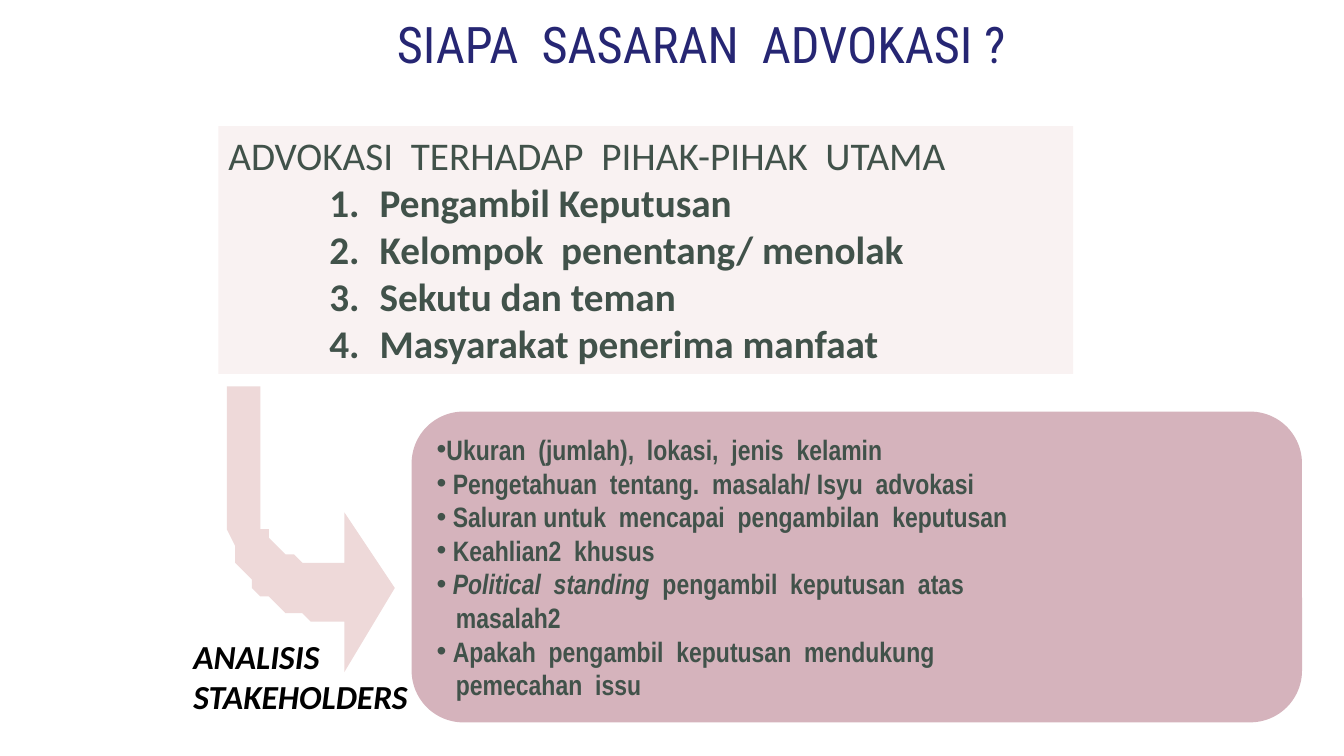
from lxml import etree
from pptx import Presentation
from pptx import util as u
from pptx.dml.color import RGBColor
from pptx.enum import shapes, text
from pptx.oxml.ns import qn

COLS, ROWS = 160, 90
COLORS = {"title": "262673", "body": "41524A", "label": "000000",
          "parties": "F9F2F2", "arrow": "EED9D9", "panel": "D5B3BC"}


def bezier(start, ctrl1, ctrl2, end, steps=16):
    """Points along a cubic curve, without its start."""
    points = []
    for i in range(1, steps + 1):
        t = i / steps
        weights = ((1 - t) ** 3, 3 * t * (1 - t) ** 2, 3 * t * t * (1 - t), t ** 3)
        corners = tuple(zip(start, ctrl1, ctrl2, end))
        points.append(tuple(sum(w * c for w, c in zip(weights, axis)) for axis in corners))
    return points


class Deck:
    def __init__(self):
        self.prs = Presentation()
        self.prs.slide_width, self.prs.slide_height = u.Emu(12192000), u.Inches(7.5)
        self.cell = self.prs.slide_height // ROWS
        self.slide = self.prs.slides.add_slide(self.prs.slide_layouts[1])

    def box(self, *grid):
        return [u.Emu(round(n * self.cell)) for n in grid]

    def paint(self, shape, color):
        shape.fill.solid()
        shape.fill.fore_color.rgb = RGBColor.from_string(COLORS[color])
        shape.line.fill.background()

    def style(self, paragraph, font, size, color, bold=False, italic=False,
              align=text.PP_ALIGN.LEFT):
        paragraph.alignment = align
        paragraph.space_before = paragraph.space_after = u.Pt(0)
        for run in paragraph.runs:
            run.font.name, run.font.size = font, u.Pt(size)
            run.font.bold, run.font.italic = bold, italic
            run.font.color.rgb = RGBColor.from_string(COLORS[color])

    def bullet(self, paragraph, margin, hang, tag="a:buNone", **attributes):
        props = paragraph._p.get_or_add_pPr()
        props.set("marL", str(u.Inches(margin)))
        props.set("indent", str(-u.Inches(hang)))
        if tag == "a:buChar":
            etree.SubElement(props, qn("a:buFont")).set("typeface", "Arial")
        etree.SubElement(props, qn(tag), attributes)

    def placeholder(self, index, grid, lines):
        holder = self.slide.placeholders[index]
        holder.left, holder.top, holder.width, holder.height = self.box(*grid)
        frame = holder.text_frame
        frame.text = "\n".join(lines)
        frame.word_wrap, frame.auto_size = True, text.MSO_AUTO_SIZE.NONE
        frame.vertical_anchor = text.MSO_ANCHOR.TOP
        return holder

    def textbox(self, grid, lines):
        frame = self.slide.shapes.add_textbox(*self.box(*grid)).text_frame
        frame.text = "\n".join(lines)
        frame.word_wrap = False
        return frame

    def panel(self, grid, color):
        shape = self.slide.shapes.add_shape(
            shapes.MSO_SHAPE.ROUNDED_RECTANGLE, *self.box(*grid))
        shape.shadow.inherit = False
        self.paint(shape, color)
        shape.text_frame.word_wrap = True
        shape.text_frame.vertical_anchor = text.MSO_ANCHOR.MIDDLE
        return shape.text_frame

    def outline(self, points, color):
        builder = self.slide.shapes.build_freeform(*points[0], scale=self.cell)
        builder.add_line_segments(points[1:], close=True)
        shape = builder.convert_to_shape()
        shape.shadow.inherit = False
        self.paint(shape, color)


def main():
    deck = Deck()

    # Title
    title = deck.placeholder(0, (29, 1, 109, 6), ["SIAPA  SASARAN  ADVOKASI ?"])
    deck.style(title.text_frame.paragraphs[0], "Roboto Condensed", 36, "title",
               align=text.PP_ALIGN.CENTER)

    # Main parties: heading and numbered list
    parties = deck.placeholder(1, (26, 15, 101.75, 29.5), [
        "ADVOKASI  TERHADAP  PIHAK-PIHAK  UTAMA",
        "Pengambil Keputusan",
        "Kelompok  penentang/ menolak",
        "Sekutu dan teman",
        "Masyarakat penerima manfaat"])
    deck.paint(parties, "parties")
    heading, *numbered = parties.text_frame.paragraphs
    deck.style(heading, "Calibri", 28, "body")
    deck.bullet(heading, 0.5, 0.5)
    for party in numbered:
        party.level = 2
        deck.style(party, "Calibri", 28, "body", bold=True)
        deck.bullet(party, 1.5, 0.5, "a:buAutoNum", type="arabicPeriod")

    # Bent arrow from the parties to the analysis
    outer = bezier((38.5, 73.7), (32.2, 73.7), (27, 67.9), (27, 60.8))
    inner = bezier((31, 60.8), (31, 64.3), (34.3, 67.2), (38.5, 67.2))
    deck.outline([(47, 70.4), (40.8, 80), (40.8, 73.7), (38.5, 73.7), *outer,
                  (27, 46), (31, 46), (31, 60.8), *inner,
                  (40.8, 67.2), (40.8, 60.8)], "arrow")

    # Arrow label
    label = deck.textbox((21.84, 75.1, 28.2, 10.9), ["ANALISIS", "STAKEHOLDERS"])
    for line in label.paragraphs:
        deck.style(line, "Calibri", 24, "label", bold=True, italic=True)

    # Stakeholder analysis: text, whether bulleted, indent in inches
    aspects = [
        ("Ukuran  (jumlah),  lokasi,  jenis  kelamin", True, 0.09),
        ("Pengetahuan  tentang.  masalah/ Isyu  advokasi", True, 0.16),
        ("Saluran untuk  mencapai  pengambilan  keputusan", True, 0.16),
        ("Keahlian2  khusus", True, 0.16),
        ("Political  standing  ", True, 0.16),
        ("masalah2", False, 0.19),
        ("Apakah  pengambil  keputusan  mendukung", True, 0.16),
        ("pemecahan  issu", False, 0.19)]
    analysis = deck.panel((49, 49, 106, 37), "panel")
    analysis.text = "\n".join(wording for wording, *_ in aspects)
    standing = analysis.paragraphs[4]
    standing.add_run().text = "pengambil  keputusan  atas"
    for aspect, (_, bulleted, indent) in zip(analysis.paragraphs, aspects):
        deck.style(aspect, "Arial Narrow", 20, "body", bold=True)
        if bulleted:
            deck.bullet(aspect, indent, indent, "a:buChar", char="•")
        else:
            deck.bullet(aspect, indent, 0)
    standing.runs[0].font.italic = True

    deck.prs.save("out.pptx")


if __name__ == "__main__":
    main()
